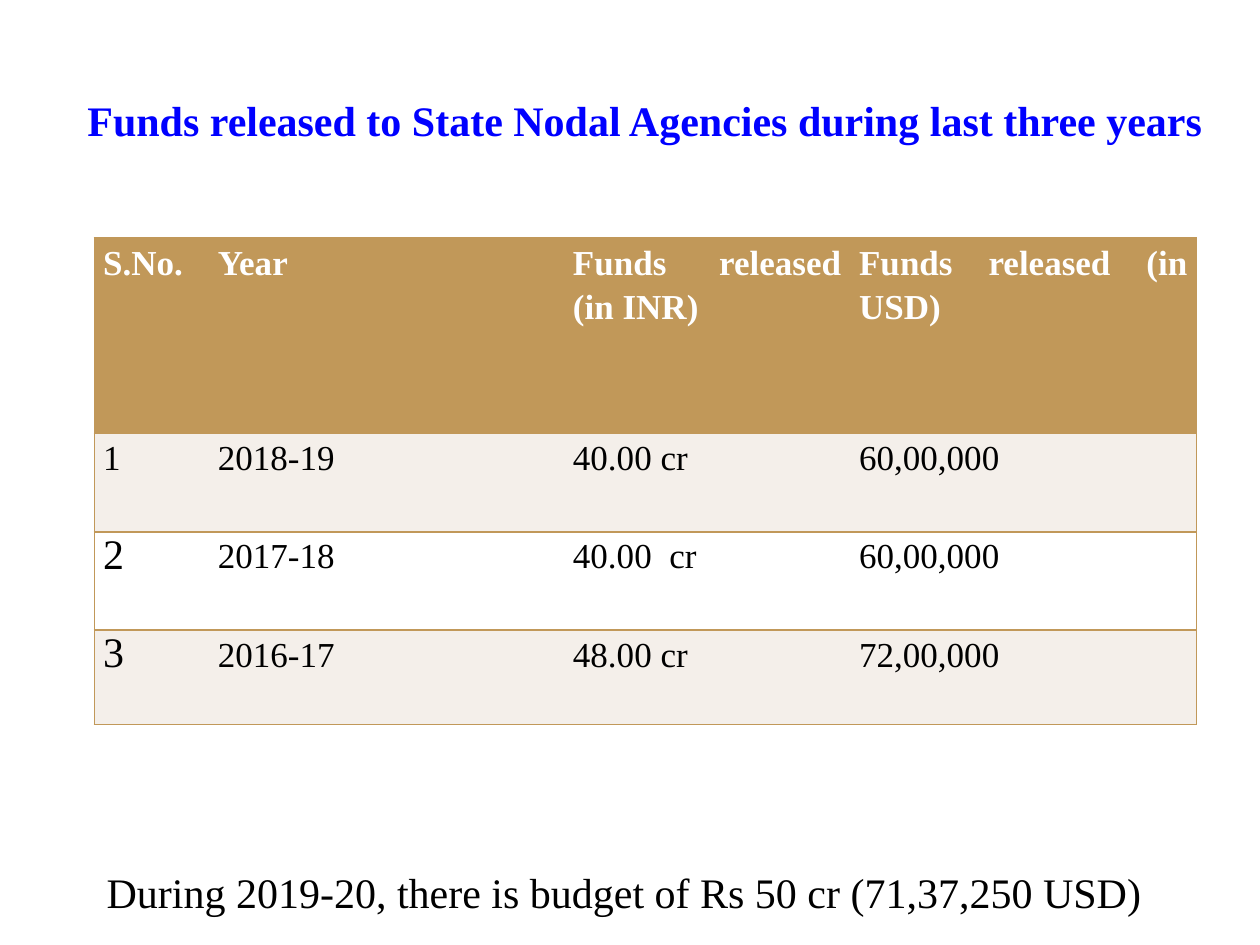
from lxml import etree
from pptx import Presentation
from pptx import util as u
from pptx.dml import color
from pptx.enum import text
from pptx.oxml import ns

FONT = "Times New Roman"
COLORS = {
    "title": "0000FF",
    "accent": "C19859",
    "band": "F4EFEA",
    "white": "FFFFFF",
    "black": "000000",
}
COLUMN_WIDTHS = [2.31, 7.16, 5.77, 6.98]
ROW_HEIGHTS = [3.94, 1.98, 1.98, 1.9]
ROWS = [
    ["S.No.", "Year", "Funds released (in INR)", "Funds released (in USD)"],
    ["1", "2018-19", "40.00 cr", "60,00,000"],
    ["2", "2017-18", "40.00  cr", "60,00,000"],
    ["3", "2016-17", "48.00 cr", "72,00,000"],
]
LARGE_NUMBERS = ("2", "3")


def rgb(name):
    return color.RGBColor.from_string(COLORS[name])


def format_runs(paragraph, size, color_name, bold=False):
    for run in paragraph.runs:
        run.font.name = FONT
        run.font.size = u.Pt(size)
        run.font.bold = bold
        run.font.color.rgb = rgb(color_name)


def add_text(slide, box, content, color_name, bold=False):
    shape = slide.shapes.add_textbox(*[u.Cm(length) for length in box])
    shape.text_frame.text = content
    format_runs(shape.text_frame.paragraphs[0], 24, color_name, bold)
    return shape


def add_title(slide):
    shape = add_text(slide, (1.47, 1.07, 23.06, 1.47),
                     "Funds released to State Nodal Agencies during last three years",
                     "title", bold=True)
    frame = shape.text_frame
    frame.word_wrap = True
    frame.margin_top, frame.margin_bottom = u.Cm(0.84), 0
    frame.paragraphs[0].alignment = text.PP_ALIGN.CENTER


def set_borders(cell, visible_sides):
    properties = cell._tc.get_or_add_tcPr()
    for side in "LRTB":
        line = etree.SubElement(properties, ns.qn(f"a:ln{side}"), w=str(u.Pt(1)))
        if side in visible_sides:
            fill = etree.SubElement(line, ns.qn("a:solidFill"))
            etree.SubElement(fill, ns.qn("a:srgbClr"), val=COLORS["accent"])
        else:
            etree.SubElement(line, ns.qn("a:noFill"))


def fill_cell(cell, content, row, column):
    cell.margin_left = cell.margin_right = u.Cm(0.18)
    cell.margin_top = cell.margin_bottom = 0
    edges = {0: "L", len(COLUMN_WIDTHS) - 1: "R"}
    set_borders(cell, "TB" + edges.get(column, ""))
    cell.fill.solid()
    cell.fill.fore_color.rgb = rgb("accent" if row == 0 else "band" if row % 2 else "white")

    cell.text_frame.text = content
    paragraph = cell.text_frame.paragraphs[0]
    large = content in LARGE_NUMBERS
    if not large:
        paragraph.alignment = text.PP_ALIGN.JUSTIFY
        paragraph.line_spacing = 1.15
    format_runs(paragraph, 24 if large else 20, "black" if row else "white", bold=row == 0)


def add_funds_table(slide):
    table = slide.shapes.add_table(
        len(ROWS), len(COLUMN_WIDTHS), u.Cm(1.9), u.Cm(4.8),
        u.Cm(sum(COLUMN_WIDTHS)), u.Cm(sum(ROW_HEIGHTS))).table
    for column, width in zip(table.columns, COLUMN_WIDTHS):
        column.width = u.Cm(width)
    for row, height in zip(table.rows, ROW_HEIGHTS):
        row.height = u.Cm(height)
    for row, values in enumerate(ROWS):
        for column, content in enumerate(values):
            fill_cell(table.cell(row, column), content, row, column)


def add_budget_note(slide):
    shape = add_text(slide, (1.9, 17.35, 21.56, 1.27),
                     "During 2019-20, there is budget of Rs 50 cr (71,37,250 USD)", "black")
    shape.text_frame.word_wrap = False
    shape.text_frame.auto_size = text.MSO_AUTO_SIZE.SHAPE_TO_FIT_TEXT


def main():
    presentation = Presentation()
    presentation.slide_width, presentation.slide_height = u.Cm(25.4), u.Cm(19.05)
    slide = presentation.slides.add_slide(presentation.slide_layouts[6])
    add_title(slide)
    add_funds_table(slide)
    add_budget_note(slide)
    presentation.save("out.pptx")


if __name__ == "__main__":
    main()
